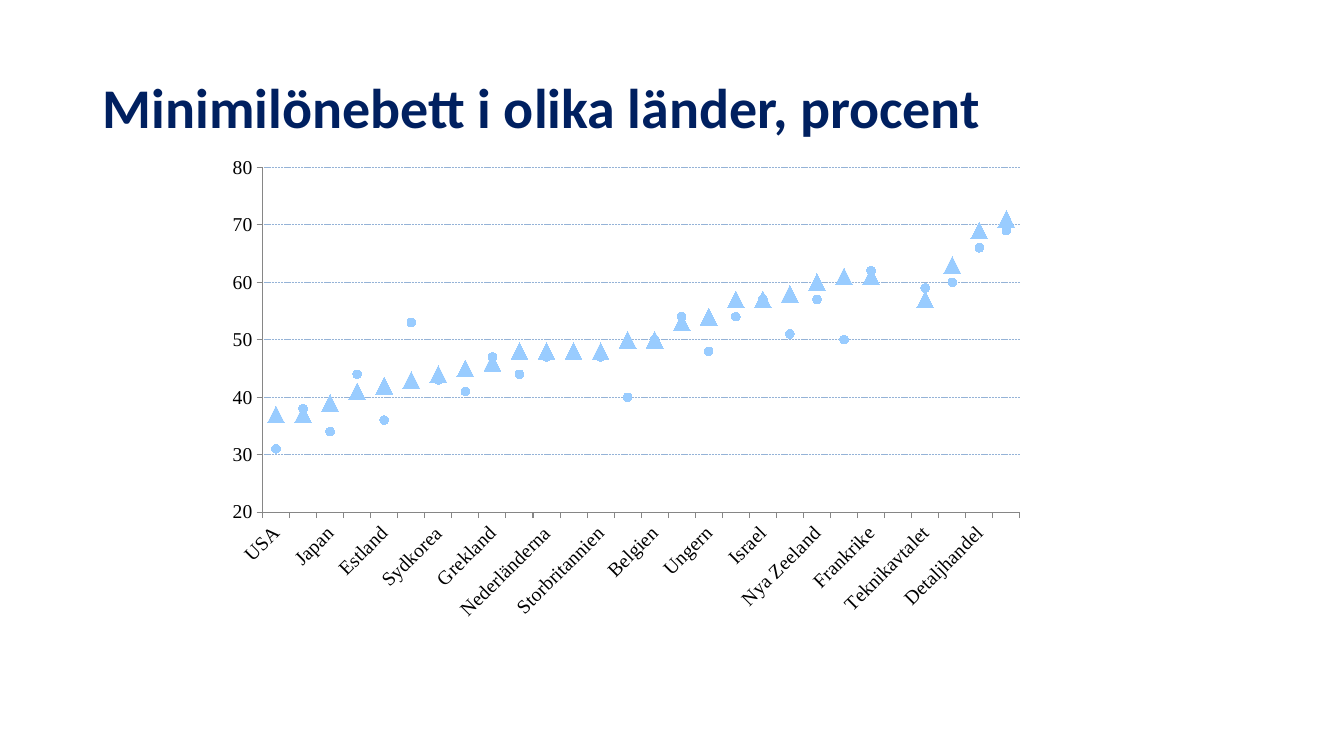
import dataclasses

import pptx
import pptx.chart.data
import pptx.dml.color
import pptx.enum.chart
import pptx.enum.dml
import pptx.enum.text
import pptx.oxml
import pptx.oxml.ns
import pptx.util
from pptx.util import Cm


@dataclasses.dataclass(frozen=True)
class Theme:
    title_font: str = "Calibri"
    title_size: int = 40
    title_color: str = "002060"
    chart_font: str = "Times New Roman"
    chart_size: int = 14
    chart_color: str = "000000"
    marker_color: str = "99CCFF"
    grid_color: str = "95B3D7"
    axis_color: str = "868686"


THEME = Theme()

WAGE_BITES = [
    ("USA", 31, 37), ("Tjeckien", 38, 37), ("Japan", 34, 39),
    ("Spanien", 44, 41), ("Estland", 36, 42), ("Irland", 53, 43),
    ("Sydkorea", 43, 44), ("Kanada", 41, 45), ("Grekland", 47, 46),
    ("Slovakien", 44, 48), ("Nederländerna", 47, 48), ("Tyskland", None, 48),
    ("Storbritannien", 47, 48), ("Polen", 40, 50), ("Belgien", 50, 50),
    ("Australien", 54, 53), ("Ungern", 48, 54), ("Luxemburg", 54, 57),
    ("Israel", 57, 57), ("Portugal", 51, 58), ("Nya Zeeland", 57, 60),
    ("Slovenien", 50, 61), ("Frankrike", 62, 61), ("", None, None),
    ("Teknikavtalet", 59, 57), ("HÖK", 60, 63),
    ("Detaljhandel", 66, 69), ("HoR", 69, 71),
]


def color(code):
    return pptx.dml.color.RGBColor.from_string(code)


def style_font(font, name, size, code, bold=False):
    font.name = name
    font.size = pptx.util.Pt(size)
    font.color.rgb = color(code)
    font.bold = bold


def style_line(line, code, width):
    line.color.rgb = color(code)
    line.width = pptx.util.Pt(width)


def fill_title(title, text):
    title.left, title.top = Cm(2.34), Cm(1.02)
    title.width, title.height = Cm(29.21), Cm(3.5)
    frame = title.text_frame
    frame.word_wrap = True
    frame.vertical_anchor = pptx.enum.text.MSO_ANCHOR.MIDDLE
    para = frame.paragraphs[0]
    para.alignment = pptx.enum.text.PP_ALIGN.LEFT
    para.line_spacing = 0.9
    span = para.add_run()
    span.text = text
    style_font(span.font, THEME.title_font, THEME.title_size, THEME.title_color, True)


def place_plot(chart, x, y, width, height):
    plot_area = chart.element.xpath("c:chart/c:plotArea")[0]
    for layout in plot_area.xpath("c:layout"):
        plot_area.remove(layout)
    plot_area.insert(0, pptx.oxml.parse_xml(
        f'<c:layout {pptx.oxml.ns.nsdecls("c")}><c:manualLayout>'
        '<c:layoutTarget val="inner"/><c:xMode val="edge"/><c:yMode val="edge"/>'
        f'<c:x val="{x}"/><c:y val="{y}"/><c:w val="{width}"/><c:h val="{height}"/>'
        '</c:manualLayout></c:layout>'))


def style_axis(axis):
    axis.major_tick_mark = pptx.enum.chart.XL_TICK_MARK.OUTSIDE
    axis.minor_tick_mark = pptx.enum.chart.XL_TICK_MARK.NONE
    style_line(axis.format.line, THEME.axis_color, 0.75)
    style_font(axis.tick_labels.font, THEME.chart_font, THEME.chart_size, THEME.chart_color)


def slant_categories(chart):
    body = chart.element.xpath(".//c:catAx/c:txPr/a:bodyPr")[0]
    body.set("rot", "-2700000")
    body.set("vert", "horz")


def style_values(axis):
    axis.minimum_scale, axis.maximum_scale, axis.major_unit = 20, 80, 10
    axis.tick_labels.number_format = "0"
    axis.tick_labels.number_format_is_linked = False
    axis.has_major_gridlines = True
    grid = axis.major_gridlines.format.line
    style_line(grid, THEME.grid_color, 0.5)
    grid.dash_style = pptx.enum.dml.MSO_LINE.SQUARE_DOT


def style_series(series, marker_style, size):
    series.smooth = False
    series.format.line.fill.background()
    marker = series.marker
    marker.style, marker.size = marker_style, size
    marker.format.fill.solid()
    marker.format.fill.fore_color.rgb = color(THEME.marker_color)
    marker.format.line.fill.background()


def add_wage_chart(page):
    countries, bites_2007, bites_2014 = zip(*WAGE_BITES)
    data = pptx.chart.data.CategoryChartData()
    data.categories = countries
    data.add_series("2007", bites_2007)
    data.add_series("2014", bites_2014)
    chart = page.shapes.add_chart(
        pptx.enum.chart.XL_CHART_TYPE.LINE_MARKERS,
        Cm(5.13), Cm(3.53), Cm(21.21), Cm(13.79), data).chart
    chart.has_title = False
    chart.has_legend = False
    style_font(chart.font, THEME.chart_font, THEME.chart_size, THEME.chart_color)
    chart.plots[0].vary_by_categories = False
    place_plot(chart, 0.07, 0.05, 0.9, 0.63)
    for axis in (chart.category_axis, chart.value_axis):
        style_axis(axis)
    slant_categories(chart)
    style_values(chart.value_axis)
    styles = pptx.enum.chart.XL_MARKER_STYLE
    markers = [(styles.CIRCLE, 6), (styles.TRIANGLE, 12)]
    for series, (marker_style, size) in zip(chart.plots[0].series, markers):
        style_series(series, marker_style, size)


def main():
    deck = pptx.Presentation()
    deck.slide_width, deck.slide_height = Cm(33.87), Cm(19.05)
    page = deck.slides.add_slide(deck.slide_layouts.get_by_name("Title Only"))
    fill_title(page.shapes.title, "Minimilönebett i olika länder, procent")
    add_wage_chart(page)
    deck.save("out.pptx")


if __name__ == "__main__":
    main()
